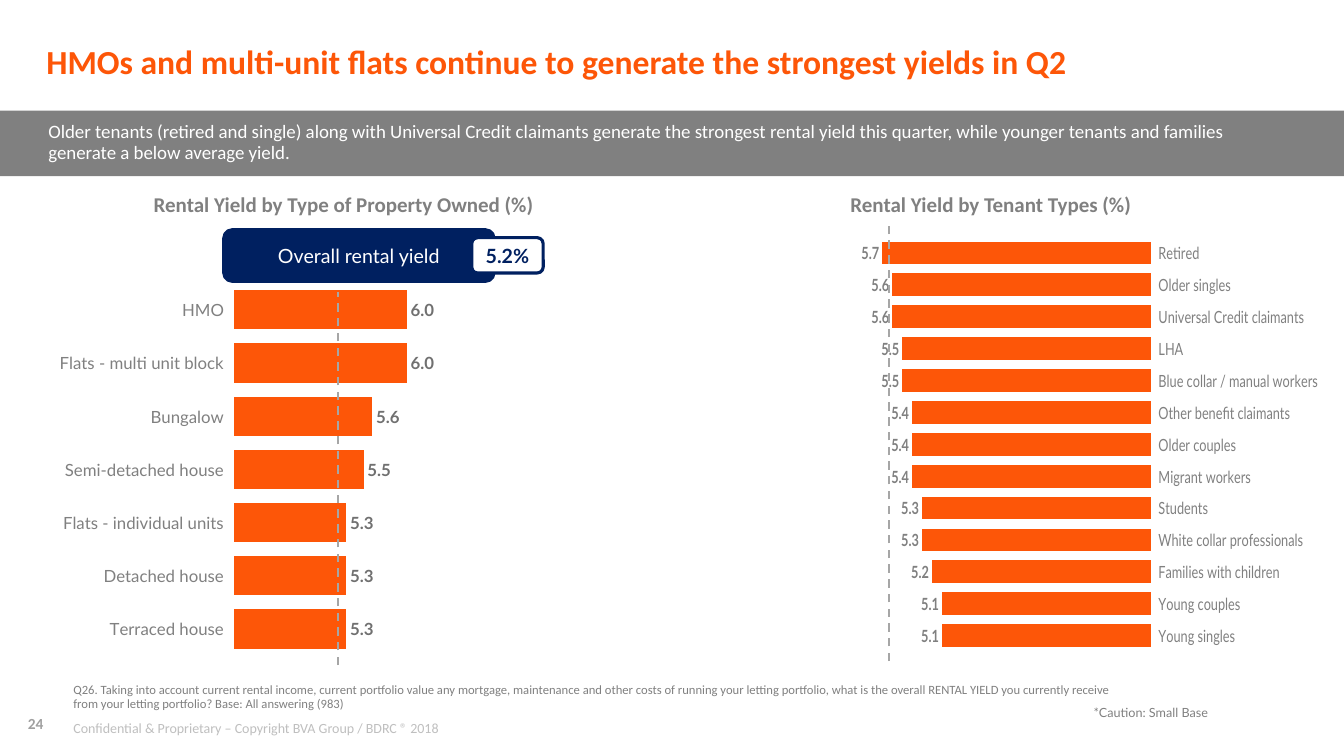
"""Build the rental yield slide with two bar charts."""
from lxml.etree import SubElement
from pptx import Presentation
from pptx.chart.data import CategoryChartData
from pptx.dml.color import RGBColor
from pptx.enum.chart import XL_CHART_TYPE, XL_LABEL_POSITION, XL_TICK_MARK
from pptx.enum.dml import MSO_LINE
from pptx.enum.shapes import MSO_CONNECTOR, MSO_SHAPE
from pptx.enum.text import MSO_ANCHOR, PP_ALIGN
from pptx.oxml import parse_xml
from pptx.oxml.ns import nsdecls, qn
from pptx.util import Cm, Pt

ORANGE = RGBColor(0xFD, 0x56, 0x08)
NAVY = RGBColor(0x00, 0x20, 0x60)
WHITE = RGBColor(0xFF, 0xFF, 0xFF)
GREY = RGBColor(0x80, 0x80, 0x80)
DARK = RGBColor(0x70, 0x70, 0x70)
DASH = RGBColor(0xA6, 0xA6, 0xA6)
PALE = RGBColor(0xBF, 0xBF, 0xBF)
NUMBER = RGBColor(0xA0, 0xA0, 0xA0)
LEFT, MID, RIGHT = PP_ALIGN.LEFT, PP_ALIGN.CENTER, PP_ALIGN.RIGHT


def style(font, name, size, color, bold=False):
    values = {"name": name, "size": Pt(size), "bold": bold}
    for key, value in values.items():
        setattr(font, key, value)
    font.color.rgb = color


def write(shape, text, look, align=LEFT, inset=0.0, anchor=MSO_ANCHOR.MIDDLE, space=0.9):
    frame = shape.text_frame
    values = {
        "word_wrap": True,
        "vertical_anchor": anchor,
        "margin_left": Cm(inset),
        "margin_right": Cm(inset),
        "margin_top": Cm(inset / 2),
        "margin_bottom": Cm(inset / 2),
    }
    for key, value in values.items():
        setattr(frame, key, value)
    para = frame.paragraphs[0]
    para.text = text
    para.alignment = align
    para.line_spacing = space
    style(para.runs[0].font, *look)


deck = Presentation()
deck.slide_width, deck.slide_height = Cm(33.87), Cm(19.05)
slide = deck.slides.add_slide(deck.slide_layouts[6])
shapes = slide.shapes

band = shapes.add_shape(MSO_SHAPE.RECTANGLE, 0, Cm(2.79), deck.slide_width, Cm(1.65))
band.shadow.inherit = False
band.fill.solid()
band.fill.fore_color.rgb = GREY
band.line.fill.background()

head = ("Calibri", 15, GREY, True)
blocks = [
    ((1.17, 0.69, 31.24, 1.85), ("Calibri", 24, ORANGE, True), LEFT,
     "HMOs and multi-unit flats continue to generate the strongest yields in Q2"),
    ((1.22, 2.79, 30.78, 1.63), ("Calibri", 13.5, WHITE), LEFT,
     "Older tenants (retired and single) along with Universal Credit claimants generate "
     "the strongest rental yield this quarter, while younger tenants and families "
     "generate a below average yield."),
    ((1.22, 4.65, 14.88, 1.09), head, MID, "Rental Yield by Type of Property Owned (%)"),
    ((17.53, 4.65, 14.88, 1.09), head, MID, "Rental Yield by Tenant Types (%)"),
    ((1.85, 17.2, 26.16, 0.76), ("Calibri", 9, GREY), LEFT,
     "Q26. Taking into account current rental income, current portfolio value any mortgage, "
     "maintenance and other costs of running your letting portfolio, what is the overall "
     "RENTAL YIELD you currently receive from your letting portfolio? "
     "Base: All answering (983)"),
    ((0.38, 17.81, 1.04, 0.91), ("Calibri", 11, NUMBER, True), MID, "24"),
]
for place, look, align, text in blocks:
    write(shapes.add_textbox(*map(Cm, place)), text, look, align)

notes = [
    ((1.6, 18.01, 28.78, 0.61), ("Calibri", 10, PALE), LEFT,
     "Confidential & Proprietary – Copyright BVA Group / BDRC ® 2018"),
    ((25.48, 17.63, 5.21, 0.64), ("Lato", 9, GREY), RIGHT, "*Caution: Small Base"),
]
for place, look, align, text in notes:
    write(shapes.add_textbox(*map(Cm, place)), text, look, align, 0.25, MSO_ANCHOR.TOP, 1.0)

homes = {
    "HMO": 6.0, "Flats - multi unit block": 6.0, "Bungalow": 5.6,
    "Semi-detached house": 5.5, "Flats - individual units": 5.3,
    "Detached house": 5.3, "Terraced house": 5.3,
}
tenants = {
    "Retired": 5.7, "Older singles": 5.6, "Universal Credit claimants": 5.6,
    "LHA": 5.5, "Blue collar / manual workers": 5.5, "Other benefit claimants": 5.4,
    "Older couples": 5.4, "Migrant workers": 5.4, "Students": 5.3,
    "White collar professionals": 5.3, "Families with children": 5.2,
    "Young couples": 5.1, "Young singles": 5.1,
}
charts = [
    (tenants, (15.82, 5.72, 17.4, 11), 3, True, 40, GREY, (0.049, 0.023, 0.951, 0.95)),
    (homes, (0.23, 6.88, 14.38, 9.88), 4, False, 36, DARK, (0.394, 0.026, 0.606, 0.95)),
]
for yields, place, low, flip, gap, tint, inner in charts:
    data = CategoryChartData(number_format="0.0")
    data.categories = list(yields)
    data.add_series("Rental yield", list(yields.values()))
    frame = shapes.add_chart(XL_CHART_TYPE.BAR_CLUSTERED, *map(Cm, place), data)
    chart = frame.chart
    chart.has_legend = chart.has_title = False
    style(chart.font, "Lato", 12, GREY)

    names = chart.category_axis
    names.reverse_order = True
    names.major_tick_mark = XL_TICK_MARK.OUTSIDE
    names.format.line.fill.background()
    style(names.tick_labels.font, "Lato", 12, GREY)

    scale = chart.value_axis
    values = {
        "minimum_scale": low, "maximum_scale": 8, "major_unit": 45,
        "reverse_order": flip, "has_major_gridlines": False, "visible": False,
    }
    for key, value in values.items():
        setattr(scale, key, value)

    plot = chart.plots[0]
    plot.gap_width = gap
    plot.vary_by_categories = False
    plot.has_data_labels = True
    labels = plot.data_labels
    values = {
        "show_value": True, "number_format": "0.0",
        "number_format_is_linked": False, "position": XL_LABEL_POSITION.OUTSIDE_END,
    }
    for key, value in values.items():
        setattr(labels, key, value)
    style(labels.font, "Lato", 12, tint, True)
    fill = plot.series[0].format.fill
    fill.solid()
    fill.fore_color.rgb = ORANGE

    area = chart._chartSpace.chart.plotArea
    for old in area.findall(qn("c:layout")):
        area.remove(old)
    layout = parse_xml(f"<c:layout {nsdecls('c')}><c:manualLayout/></c:layout>")
    tags = ("layoutTarget", "xMode", "yMode", "x", "y", "w", "h")
    for tag, value in zip(tags, ("inner", "edge", "edge") + inner):
        SubElement(layout[0], qn(f"c:{tag}")).set("val", str(value))
    area.insert(0, layout)

for x, top, base in [(22.4, 5.66, 16.66), (8.51, 7.37, 16.76)]:
    mean = shapes.add_connector(MSO_CONNECTOR.STRAIGHT, Cm(x), Cm(base), Cm(x), Cm(top))
    mean.line.color.rgb = DASH
    mean.line.width = Pt(1.5)
    mean.line.dash_style = MSO_LINE.DASH
    SubElement(mean._element.spPr, qn("a:effectLst"))

group = shapes.add_group_shape()
badges = [
    ((5.64, 5.79, 6.81, 1.3), NAVY, ("Lato", 14, WHITE), "Overall rental yield"),
    ((11.89, 5.99, 1.8, 0.89), WHITE, ("Lato", 14, NAVY, True), "5.2%"),
]
for place, color, look, text in badges:
    badge = group.shapes.add_shape(MSO_SHAPE.ROUNDED_RECTANGLE, *map(Cm, place))
    badge.shadow.inherit = False
    badge.fill.solid()
    badge.fill.fore_color.rgb = color
    badge.line.color.rgb = NAVY
    badge.line.width = Pt(2.25)
    write(badge, text, look, MID, space=1.0)

deck.save("out.pptx")
